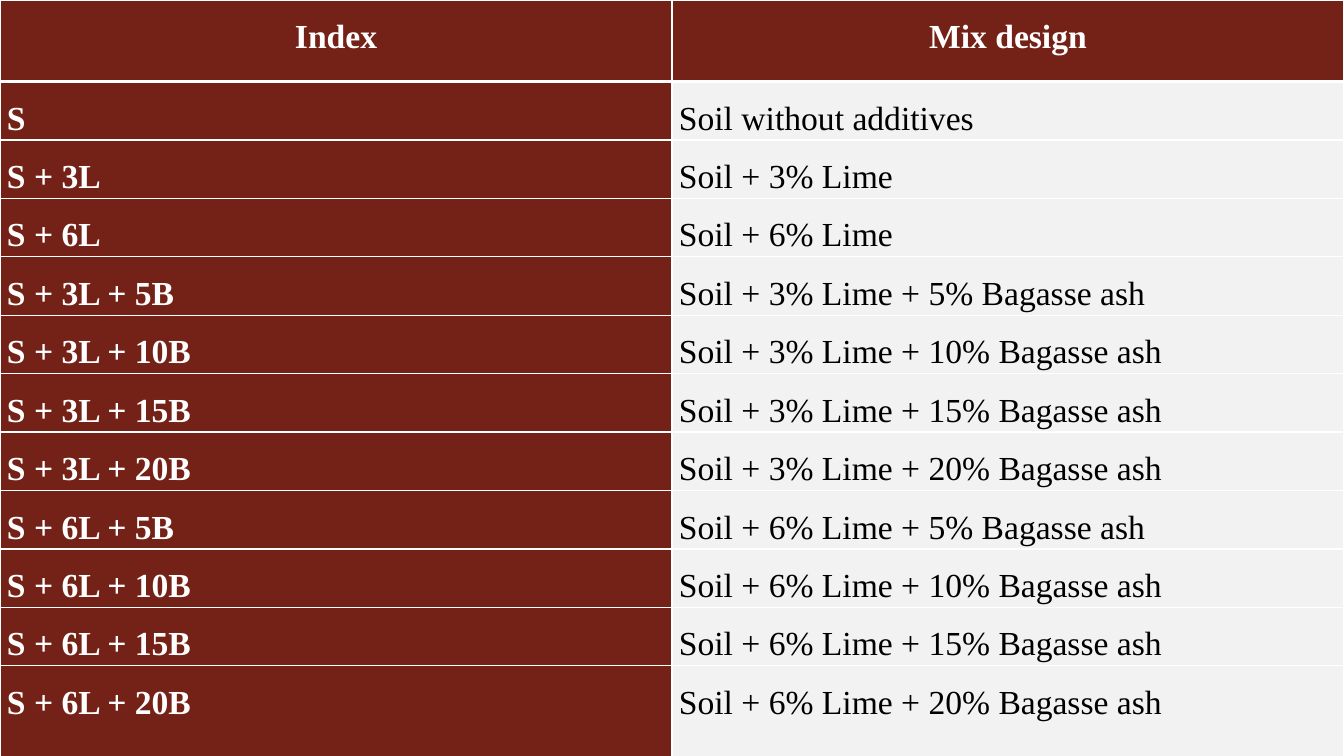
"""Build a slide with a full-page table of soil mix designs."""
from lxml import etree
from pptx import Presentation
from pptx import util as u
from pptx.dml.color import RGBColor
from pptx.enum import text
from pptx.oxml.ns import qn

HEADINGS = ("Index", "Mix design")
MIXES = [
    ("S", "Soil without additives"),
    ("S + 3L", "Soil + 3% Lime"),
    ("S + 6L", "Soil + 6% Lime"),
] + [
    (f"S + {lime}L + {ash}B", f"Soil + {lime}% Lime + {ash}% Bagasse ash")
    for lime in (3, 6)
    for ash in (5, 10, 15, 20)
]
COLORS = {"maroon": "742217", "gray": "F2F2F2", "white": "FFFFFF", "black": "000000"}
SLIDE_WIDTH, SLIDE_HEIGHT = 960, 540
HEADER_HEIGHT, ROW_HEIGHT, LAST_HEIGHT = 58.3, 41.75, 64.8
BORDER, HEADER_BORDER = 1, 3
MARGINS = {"margin_left": u.Pt(5), "margin_right": u.Pt(5), "margin_top": 0, "margin_bottom": 0}
FONT = {"name": "Times New Roman", "size": u.Pt(24)}


def set_attributes(target, values):
    for name, value in values.items():
        setattr(target, name, value)


def add_borders(cell, widths):
    properties = cell._tc.get_or_add_tcPr()
    for position, (side, width) in enumerate(widths.items()):
        line = etree.Element(qn(f"a:ln{side}"), w=str(u.Pt(width)))
        fill = etree.SubElement(line, qn("a:solidFill"))
        etree.SubElement(fill, qn("a:srgbClr"), val=COLORS["white"])
        properties.insert(position, line)


def fill_cell(cell, words, is_header, is_index):
    strong = is_header or is_index
    set_attributes(cell, MARGINS)
    cell.fill.solid()
    cell.fill.fore_color.rgb = RGBColor.from_string(COLORS["maroon" if strong else "gray"])
    add_borders(cell, {
        "L": BORDER,
        "R": BORDER,
        "T": BORDER,
        "B": HEADER_BORDER if is_header else BORDER,
    })
    paragraph = cell.text_frame.paragraphs[0]
    alignment = text.PP_ALIGN.CENTER if is_header else text.PP_ALIGN.LEFT
    set_attributes(paragraph, {"alignment": alignment, "line_spacing": 1.5})
    run = paragraph.add_run()
    run.text = words
    set_attributes(run.font, {**FONT, "bold": strong})
    run.font.color.rgb = RGBColor.from_string(COLORS["white" if strong else "black"])


def main():
    presentation = Presentation()
    set_attributes(presentation, {"slide_width": u.Pt(SLIDE_WIDTH), "slide_height": u.Pt(SLIDE_HEIGHT)})
    slide = presentation.slides.add_slide(presentation.slide_layouts[6])

    rows = [HEADINGS, *MIXES]
    heights = [HEADER_HEIGHT] + [ROW_HEIGHT] * (len(MIXES) - 1) + [LAST_HEIGHT]
    table = slide.shapes.add_table(
        len(rows), len(HEADINGS), 0, 0, u.Pt(SLIDE_WIDTH), u.Pt(sum(heights))
    ).table
    set_attributes(table, {"first_row": True, "first_col": True, "horz_banding": False})

    for row_number, (words, height) in enumerate(zip(rows, heights)):
        table.rows[row_number].height = u.Pt(height)
        for column_number, entry in enumerate(words):
            cell = table.cell(row_number, column_number)
            fill_cell(cell, entry, row_number == 0, column_number == 0)

    presentation.save("out.pptx")


if __name__ == "__main__":
    main()
